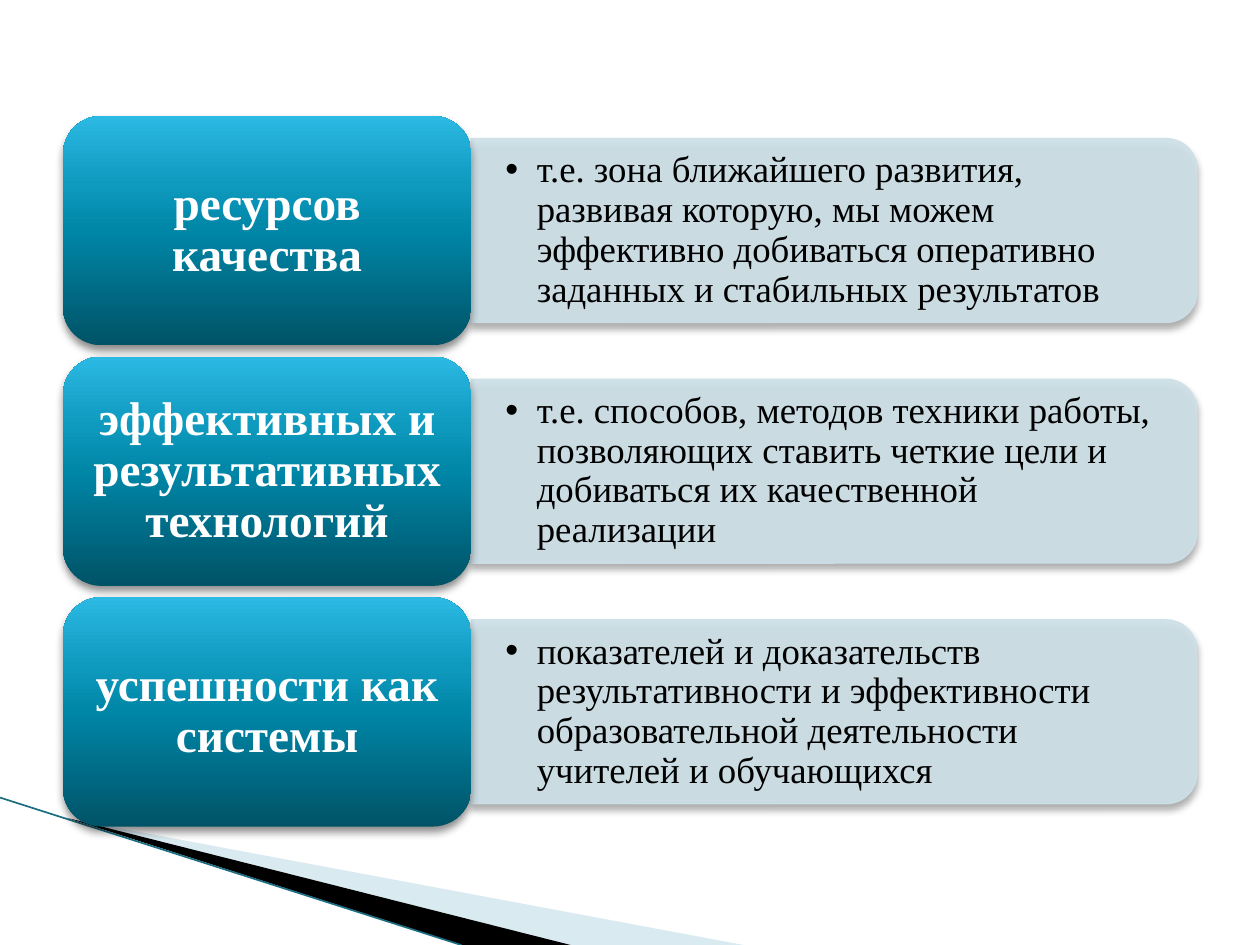
from dataclasses import dataclass

from lxml import etree
from pptx import Presentation
from pptx.dml.color import RGBColor
from pptx.enum.shapes import MSO_CONNECTOR, MSO_SHAPE
from pptx.enum.text import MSO_ANCHOR, MSO_AUTO_SIZE, PP_ALIGN
from pptx.oxml.ns import qn
from pptx.util import Inches, Pt


@dataclass(frozen=True)
class Theme:
    font: str = "Times New Roman"
    label_size: int = 27
    detail_size: int = 21
    label_text: str = "FFFFFF"
    dark: str = "000000"
    panel: str = "CDE0E8"
    wedge: str = "A0CBDC"
    edge: str = "1B6E82"
    gradient: tuple = ((0, "005367"), (50, "0086A7"), (70, "0E9ABE"), (100, "2CB9E3"))


THEME = Theme()

# Grid in inches: a label column, a detail column and equal rows
LEFT, TOP, PITCH = 0.5, 0.92, 1.91
LABEL_W, LABEL_H = 3.24, 1.82
PANEL_W, PANEL_H = 5.76, 1.46
TEXT_W, TEXT_H = 5.69, 1.32
SPLIT = LEFT + LABEL_W

ROWS = [
    ("ресурсов качества",
     "т.е. зона ближайшего развития, развивая которую, мы можем эффективно "
     "добиваться оперативно заданных и стабильных результатов"),
    ("эффективных и результативных технологий",
     "т.е. способов, методов техники работы, позволяющих ставить четкие цели и "
     "добиваться их качественной реализации"),
    ("успешности как системы",
     "показателей и доказательств результативности и эффективности "
     "образовательной деятельности учителей и обучающихся"),
]


def rgb(color):
    return RGBColor.from_string(color)


def child(parent, tag, **attributes):
    return etree.SubElement(parent, qn(tag), {k: str(v) for k, v in attributes.items()})


def set_alpha(parent, percent):
    for color in parent.iter(qn("a:srgbClr")):
        child(color, "a:alpha", val=percent * 1000)


def add_shadow(shape, percent, blur):
    shape.shadow.inherit = False
    effects = shape._element.spPr.find(qn("a:effectLst"))
    outer = child(effects, "a:outerShdw", blurRad=Pt(blur), dist=Pt(3),
                  dir=5400000, rotWithShape=0)
    child(outer, "a:srgbClr", val=THEME.dark)
    set_alpha(outer, percent)


def set_frame(frame, across, down):
    frame.word_wrap = True
    frame.auto_size = MSO_AUTO_SIZE.NONE
    frame.vertical_anchor = MSO_ANCHOR.MIDDLE
    frame.margin_left = frame.margin_right = Inches(across)
    frame.margin_top = frame.margin_bottom = Inches(down)


def style_paragraph(paragraph, size, color, bold):
    paragraph.line_spacing = 0.9
    paragraph.space_before = Pt(0)
    font = paragraph.font
    font.name, font.size, font.bold = THEME.font, Pt(size), bold
    font.color.rgb = rgb(color)


def add_wedge(slide, points, color, opacity=100):
    start, *rest = [(Inches(x), Inches(y)) for x, y in points]
    builder = slide.shapes.build_freeform(*start)
    builder.add_line_segments(rest, close=True)
    wedge = builder.convert_to_shape()
    wedge.shadow.inherit = False
    wedge.fill.solid()
    wedge.fill.fore_color.rgb = rgb(color)
    wedge.line.fill.background()
    set_alpha(wedge._element.spPr, opacity)


def add_corner(slide):
    add_wedge(slide, [(0.55, 6.5), (5.9, 7.5), (4.52, 7.5)], THEME.wedge, 40)
    add_wedge(slide, [(0.53, 6.49), (4.53, 7.5), (3.67, 7.5)], THEME.dark)
    edge = slide.shapes.add_connector(
        MSO_CONNECTOR.STRAIGHT, 0, Inches(6.33), Inches(3.66), Inches(7.5))
    edge.line.color.rgb = rgb(THEME.edge)
    edge.line.width = Pt(0.95)
    child(edge._element.spPr, "a:effectLst")


def add_panel(slide, middle):
    # Turned a quarter so that the rounded end points right
    panel = slide.shapes.add_shape(
        MSO_SHAPE.ROUND_2_SAME_RECTANGLE,
        Inches(SPLIT + (PANEL_W - PANEL_H) / 2), Inches(middle - PANEL_W / 2),
        Inches(PANEL_H), Inches(PANEL_W))
    panel.rotation = 90
    panel.fill.solid()
    panel.fill.fore_color.rgb = rgb(THEME.panel)
    panel.line.color.rgb = rgb(THEME.panel)
    panel.line.width = Pt(0.75)
    set_alpha(panel._element.spPr, 90)
    add_shadow(panel, 35, 4)


def place_detail(slide, body, middle, text):
    slide.shapes._spTree.append(body._element)  # in front of its panel
    body.left, body.top = Inches(SPLIT), Inches(middle - TEXT_H / 2)
    body.width, body.height = Inches(TEXT_W), Inches(TEXT_H)
    set_frame(body.text_frame, 0.27, 0.14)
    paragraph = body.text_frame.paragraphs[0]
    paragraph.text = text
    properties = paragraph._p.get_or_add_pPr()
    properties.set("marL", str(Inches(0.25)))
    properties.set("indent", str(-Inches(0.25)))
    child(properties, "a:buChar", char="•")
    style_paragraph(paragraph, THEME.detail_size, THEME.dark, False)


def add_label(slide, top, text):
    label = slide.shapes.add_shape(
        MSO_SHAPE.ROUNDED_RECTANGLE, Inches(LEFT), Inches(top),
        Inches(LABEL_W), Inches(LABEL_H))
    label.fill.gradient()
    label.fill.gradient_angle = 90
    stops = label._element.spPr.find(qn("a:gradFill")).find(qn("a:gsLst"))
    for stop in list(stops):
        stops.remove(stop)
    for position, color in THEME.gradient:
        child(child(stops, "a:gs", pos=position * 1000), "a:srgbClr", val=color)
    label.line.fill.background()
    add_shadow(label, 45, 5)
    # The rounded corners already inset the text, so the margins stay small
    set_frame(label.text_frame, 0.1, 0.06)
    paragraph = label.text_frame.paragraphs[0]
    paragraph.text = text
    paragraph.alignment = PP_ALIGN.CENTER
    style_paragraph(paragraph, THEME.label_size, THEME.label_text, True)


def main():
    deck = Presentation()
    deck.slide_width, deck.slide_height = Inches(10), Inches(7.5)
    # The comparison layout offers enough body placeholders for three lists
    slide = deck.slides.add_slide(deck.slide_layouts.get_by_name("Comparison"))
    _, *bodies = slide.placeholders
    details = bodies[:len(ROWS)]

    add_corner(slide)
    for row, (body, (label, detail)) in enumerate(zip(details, ROWS)):
        top = TOP + row * PITCH
        middle = top + LABEL_H / 2
        add_panel(slide, middle)
        place_detail(slide, body, middle, detail)
        add_label(slide, top, label)

    # Unused placeholders
    for placeholder in list(slide.placeholders):
        if not placeholder.text_frame.text:
            slide.shapes._spTree.remove(placeholder._element)
    deck.save("out.pptx")


if __name__ == "__main__":
    main()
